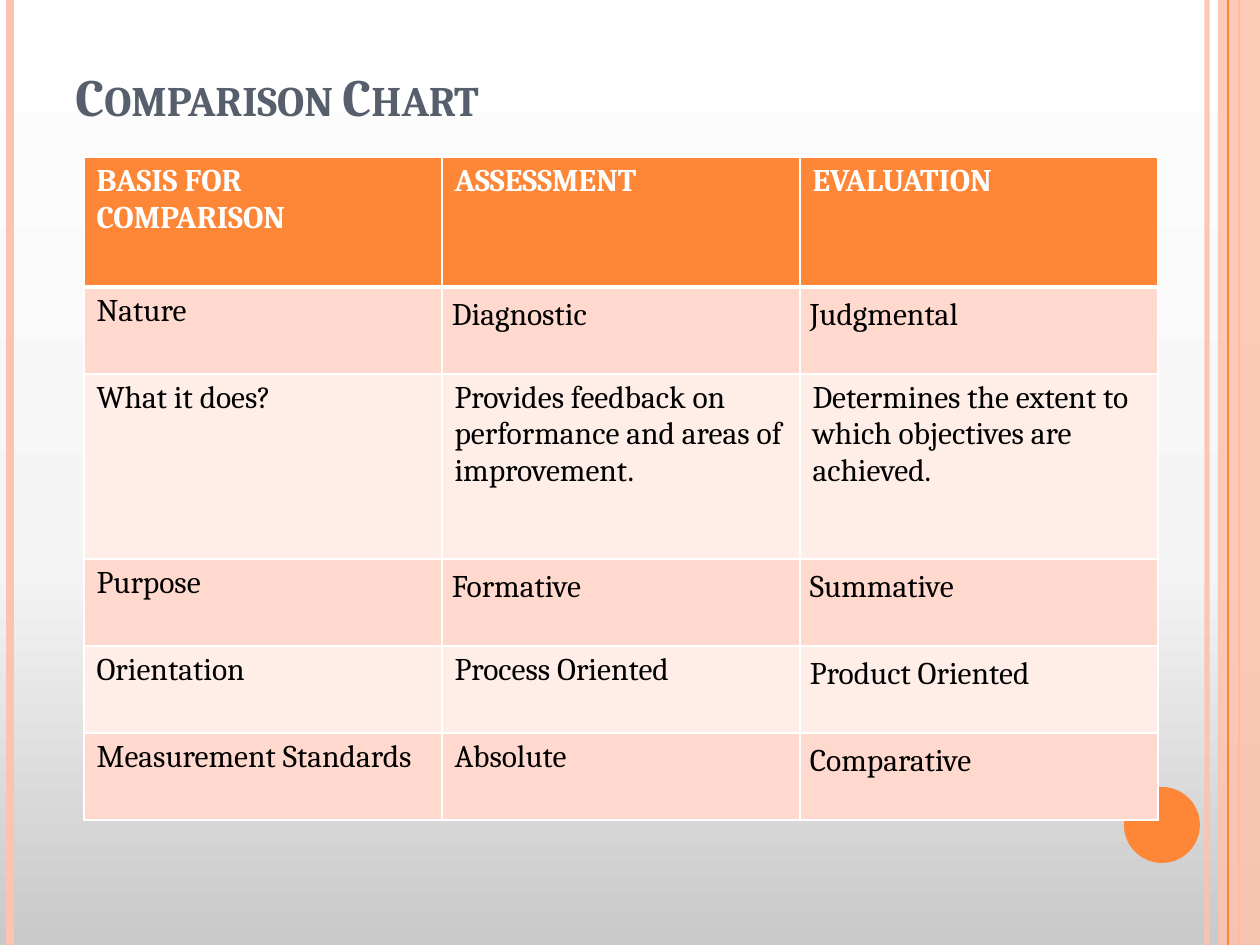
from pptx import Presentation
from pptx.dml.color import RGBColor
from pptx.enum.shapes import MSO_CONNECTOR, MSO_SHAPE
from pptx.enum.text import MSO_ANCHOR
from pptx.oxml import parse_xml
from pptx.oxml.ns import nsdecls, qn
from pptx.util import Pt
from lxml import etree

LINE = MSO_CONNECTOR.STRAIGHT
RECT, OVAL = MSO_SHAPE.RECTANGLE, MSO_SHAPE.OVAL
BOTTOM = MSO_ANCHOR.BOTTOM
FONT = "Cambria"
PEACH, ORANGE, WHITE = "FEC3AE", "FE8637", "FFFFFF"
WIDE, HIGH = 1260, 945

STOPS = [(0, "C9C9C9"), (40, "F4F4F4"), (100, WHITE)]
TITLE = "Comparison Chart"
ROWS = [
    ("BASIS FOR COMPARISON", "ASSESSMENT", "EVALUATION"),
    ("Nature", "Diagnostic", "Judgmental"),
    ("What it does?", "Provides feedback on performance and areas of improvement.",
     "Determines the extent to which objectives are achieved."),
    ("Purpose", "Formative", "Summative"),
    ("Orientation", "Process Oriented", "Product Oriented"),
    ("Measurement Standards", "Absolute", "Comparative"),
]
TALL = [130, 87, 185, 87, 87, 87]
COL = 358
FILLS = [ORANGE] + ["FFD9CE", "FFEDE8"] * 2 + ["FFD9CE"]
INSET = {(1, 1), (1, 2), (3, 1), (3, 2), (4, 2), (5, 2)}


def px(n):
    return round(n * 914400 / 126)


def rgb(code):
    return RGBColor.from_string(code)


def fade(item, part):
    for tag in item._element.spPr.iter(qn("a:srgbClr")):
        etree.SubElement(tag, qn("a:alpha")).set("val", str(part * 1000))


def rule(x, code, width):
    line = slide.shapes.add_connector(LINE, px(x), 0, px(x), px(HIGH))
    line.line.color.rgb = rgb(code)
    line.line.width = Pt(width)
    etree.SubElement(line._element.spPr, qn("a:effectLst"))
    return line


def shape(kind, x, y, w, h, code):
    item = slide.shapes.add_shape(kind, px(x), px(y), px(w), px(h))
    item.shadow.inherit = False
    item.fill.solid()
    item.fill.fore_color.rgb = rgb(code)
    item.line.fill.background()
    return item


def write(frame, text, size, code, bold):
    run = frame.paragraphs[0].add_run()
    run.text = text
    font = run.font
    font.name, font.size, font.bold = FONT, Pt(size), bold
    font.color.rgb = rgb(code)
    return run


def edge(cell, side, width):
    cell._tc.get_or_add_tcPr().append(parse_xml(
        f'<a:ln{side} {nsdecls("a")} w="{Pt(width)}"><a:solidFill>'
        f'<a:srgbClr val="{WHITE}"/></a:solidFill></a:ln{side}>'))


deck = Presentation()
deck.slide_width, deck.slide_height = px(WIDE), px(HIGH)
slide = deck.slides.add_slide(deck.slide_layouts[6])

back = slide.background.fill
back.gradient()
back.gradient_angle = 90
stops = next(slide._element.iter(qn("a:gsLst")))
for old in list(stops):
    stops.remove(old)
for pos, code in STOPS:
    stop = etree.SubElement(stops, qn("a:gs"))
    stop.set("pos", str(pos * 1000))
    etree.SubElement(stop, qn("a:srgbClr")).set("val", code)

fade(rule(1207, PEACH, 3), 93)
rule(10, PEACH, 4.5)
rule(1239, ORANGE, 1.5)
fade(shape(RECT, 1218, 0, 42, HIGH, PEACH), 87)
rule(1228, ORANGE, 0.75)
shape(OVAL, 1124, 787, 76, 76, ORANGE)

head = slide.shapes.add_textbox(px(63), px(38), px(1029), px(157)).text_frame
head.word_wrap = True
head.vertical_anchor = BOTTOM
head.margin_bottom = px(68)
run = write(head, TITLE, 30, "575F6D", True)
run._r.get_or_add_rPr().set("cap", "small")

grid = slide.shapes.add_table(len(ROWS), len(ROWS[0]), px(84), px(157),
                              px(COL * len(ROWS[0])), px(sum(TALL))).table
grid.horz_banding = False
for col in grid.columns:
    col.width = px(COL)
for r, (texts, tall, code) in enumerate(zip(ROWS, TALL, FILLS)):
    grid.rows[r].height = px(tall)
    for c, text in enumerate(texts):
        cell = grid.cell(r, c)
        if (r, c) in INSET:
            cell.margin_left = cell.margin_right = px(10)
            cell.margin_top = cell.margin_bottom = px(10)
        for side in "LRTB":
            edge(cell, side, 3 if (r, side) in ((0, "B"), (1, "T")) else 1)
        cell.fill.solid()
        cell.fill.fore_color.rgb = rgb(code)
        write(cell.text_frame, text, 18, "000000" if r else WHITE, r == 0)

deck.save("out.pptx")
